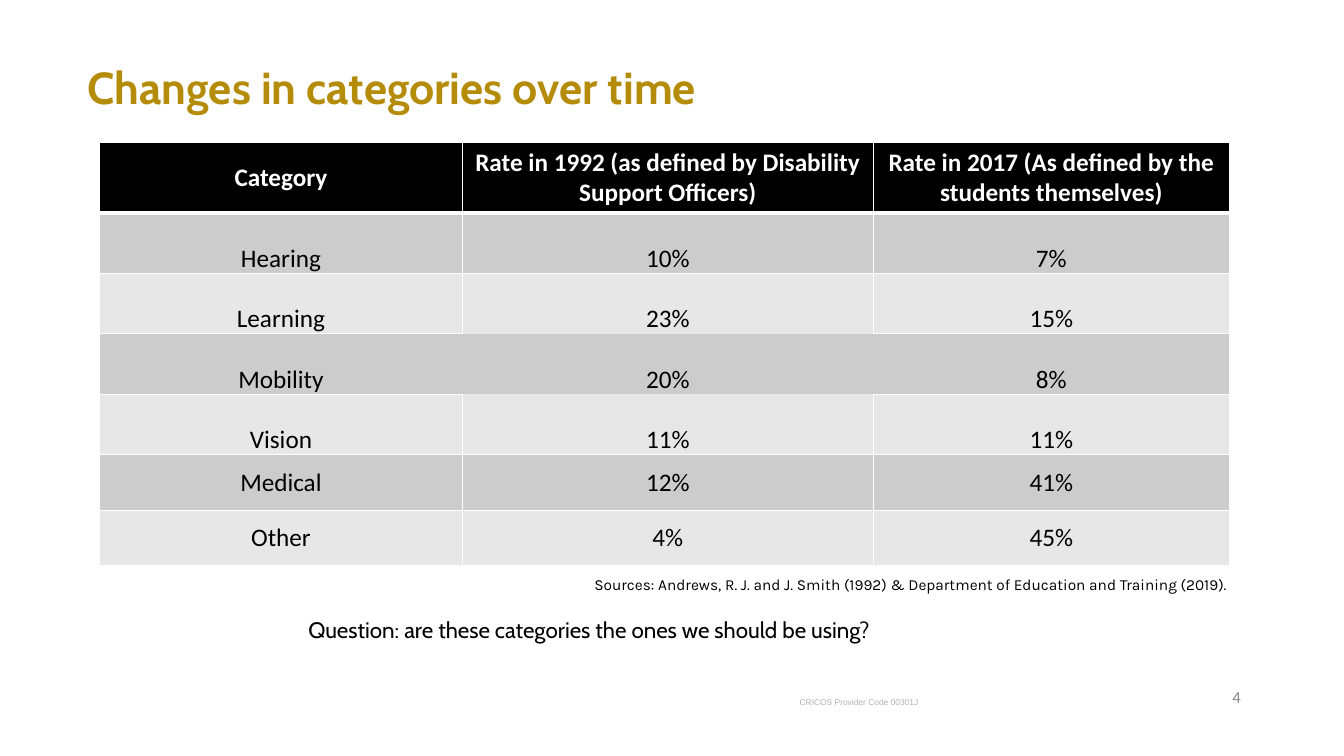
import pptx
import pptx.dml.color
import pptx.enum.text
import pptx.oxml
import pptx.oxml.ns
import pptx.util
from pptx.dml.color import RGBColor
from pptx.enum.text import MSO_ANCHOR, MSO_AUTO_SIZE, PP_ALIGN
from pptx.util import Cm

GOLD = RGBColor(0xB5, 0x8C, 0x0A)
BLACK = RGBColor(0, 0, 0)
WHITE = RGBColor(0xFF, 0xFF, 0xFF)
DARK_BAND = RGBColor(0xCC, 0xCC, 0xCC)
LIGHT_BAND = RGBColor(0xE7, 0xE7, 0xE7)
CODE_GREY = RGBColor(0xB2, 0xB2, 0xB2)
NUMBER_GREY = RGBColor(0x8C, 0x8C, 0x8C)

RATES = [
    ("Category", "Rate in 1992 (as defined by Disability Support Officers)",
     "Rate in 2017 (As defined by the students themselves)"),
    ("Hearing", "10%", "7%"),
    ("Learning", "23%", "15%"),
    ("Mobility", "20%", "8%"),
    ("Vision", "11%", "11%"),
    ("Medical", "12%", "41%"),
    ("Other", "4%", "45%"),
]
COLUMN_WIDTHS = (9.14, 10.36, 8.97)
HEADER_HEIGHT, ROW_HEIGHT = 1.68, 1.4
DOUBLE_SPACED_ROWS = range(1, 5)
BORDERLESS_CELL = (3, 1)
SIDES = {"L": (0, -1), "R": (0, 1), "T": (-1, 0), "B": (1, 0)}


def write(paragraph, text, size, font, color, bold=False, align=PP_ALIGN.LEFT):
    paragraph.alignment = align
    run = paragraph.add_run()
    run.text = text
    run.font.size = pptx.util.Pt(size)
    run.font.name = font
    run.font.bold = bold
    run.font.color.rgb = color


def add_text(slide, box, text, size, font, color, bold=False,
             align=PP_ALIGN.LEFT, anchor=MSO_ANCHOR.TOP, grow=False):
    """Add a one-paragraph text box; box is left, top, width, height in cm."""
    frame = slide.shapes.add_textbox(*map(Cm, box)).text_frame
    frame.word_wrap = True
    frame.vertical_anchor = anchor
    frame.auto_size = MSO_AUTO_SIZE.SHAPE_TO_FIT_TEXT if grow else MSO_AUTO_SIZE.NONE
    paragraph = frame.paragraphs[0]
    write(paragraph, text, size, font, color, bold, align)
    return paragraph


def set_borders(cell, row, column):
    """Rule the cell in white, leaving every edge of the borderless cell open."""
    properties = cell._tc.get_or_add_tcPr()
    for side, (down, across) in SIDES.items():
        neighbour = (row + down, column + across)
        is_open = BORDERLESS_CELL in ((row, column), neighbour)
        under_header = (row, side) in ((0, "B"), (1, "T"))
        width = pptx.util.Pt(3 if under_header else 1)
        paint = "<a:noFill/>" if is_open else (
            f'<a:solidFill><a:srgbClr val="{WHITE}"/></a:solidFill>')
        properties.append(pptx.oxml.parse_xml(
            f'<a:ln{side} {pptx.oxml.ns.nsdecls("a")} w="{width}">{paint}</a:ln{side}>'))


def fill_cell(cell, row, column, text):
    is_header = row == 0
    set_borders(cell, row, column)
    cell.fill.solid()
    cell.fill.fore_color.rgb = (
        BLACK if is_header else DARK_BAND if row % 2 else LIGHT_BAND)
    cell.vertical_anchor = MSO_ANCHOR.MIDDLE
    if not is_header:
        cell.margin_left = cell.margin_right = 0
        cell.margin_top = cell.margin_bottom = 0
    paragraph = cell.text_frame.paragraphs[0]
    if row in DOUBLE_SPACED_ROWS:
        paragraph.line_spacing = 2.0
    write(paragraph, text, 18, "Calibri", WHITE if is_header else BLACK,
          is_header, PP_ALIGN.CENTER)


def add_rates_table(slide):
    heights = [HEADER_HEIGHT] + [ROW_HEIGHT] * (len(RATES) - 1)
    table = slide.shapes.add_table(
        len(RATES), len(COLUMN_WIDTHS), Cm(2.51), Cm(3.58),
        Cm(sum(COLUMN_WIDTHS)), Cm(sum(heights))).table
    for column, width in zip(table.columns, COLUMN_WIDTHS):
        column.width = Cm(width)
    for table_row, height in zip(table.rows, heights):
        table_row.height = Cm(height)
    for row, texts in enumerate(RATES):
        for column, text in enumerate(texts):
            fill_cell(table.cell(row, column), row, column, text)


def main():
    deck = pptx.Presentation()
    deck.slide_width, deck.slide_height = Cm(33.87), Cm(19.05)
    slide = deck.slides.add_slide(deck.slide_layouts[6])

    add_text(slide, (13.56, 17.45, 9.83, 0.51), "CRICOS Provider Code 00301J",
             6, "Arial", CODE_GREY, align=PP_ALIGN.RIGHT, grow=True)
    add_text(slide, (23.9, 17.04, 7.62, 1.02), "4", 12, "Calibri", NUMBER_GREY,
             align=PP_ALIGN.RIGHT, anchor=MSO_ANCHOR.MIDDLE)
    title = add_text(slide, (1.96, 1.27, 29.57, 1.98),
                     "Changes in categories over time", 32, "Cabin", GOLD,
                     bold=True, anchor=MSO_ANCHOR.MIDDLE)
    title.line_spacing = 0.9
    add_rates_table(slide)
    add_text(slide, (14.53, 14.38, 16.66, 0.74),
             "Sources: Andrews, R. J. and J. Smith (1992) & "
             "Department of Education and Training (2019).",
             11, "Karla", BLACK, align=PP_ALIGN.RIGHT, grow=True)
    add_text(slide, (7.52, 15.39, 20.55, 0.94),
             "Question: are these categories the ones we should be using?",
             16, "Cabin", BLACK, grow=True)
    deck.save("out.pptx")


if __name__ == "__main__":
    main()
